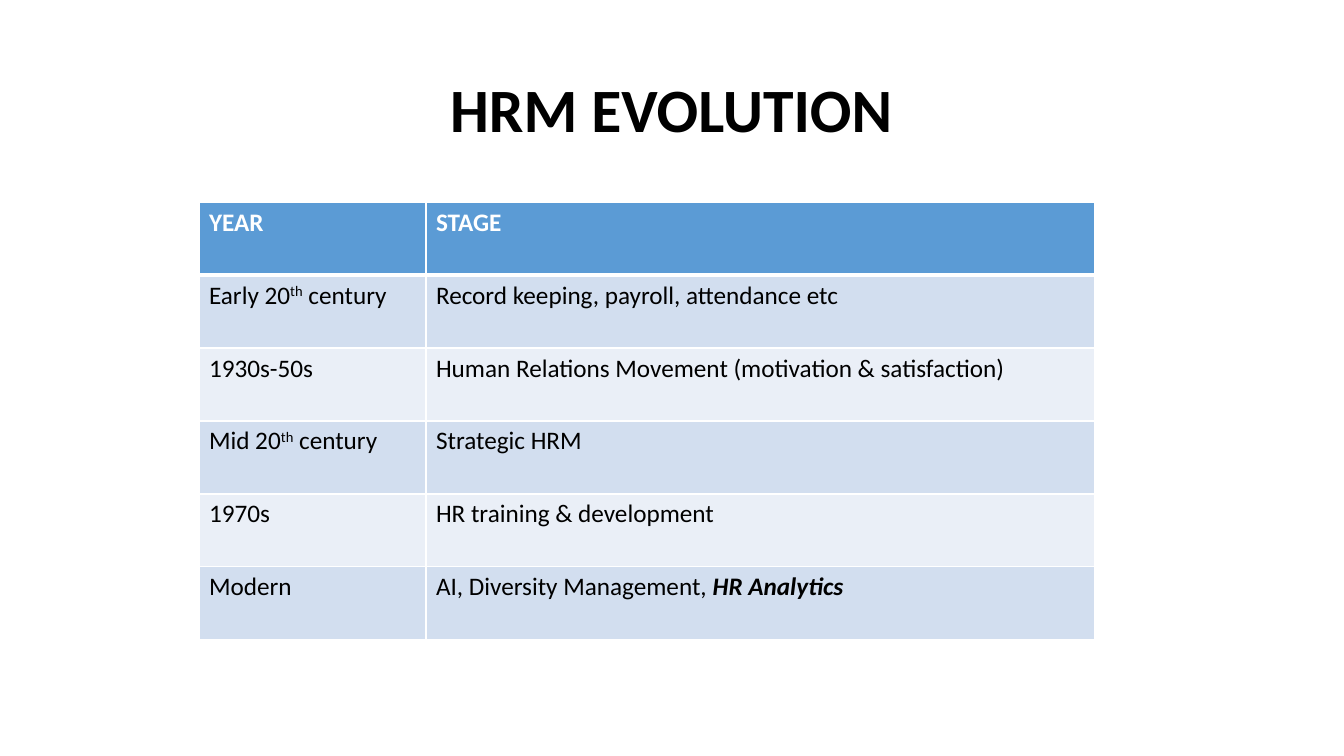
from dataclasses import dataclass

import lxml.etree
import pptx
import pptx.dml.color
import pptx.enum.text
import pptx.oxml.ns
import pptx.util

RGBColor = pptx.dml.color.RGBColor

EMU_PER_PX = 914400 / 100.8
FONT_NAME = "Calibri"
WHITE = RGBColor(0xFF, 0xFF, 0xFF)
BLACK = RGBColor(0x00, 0x00, 0x00)
HEADER_BLUE = RGBColor(0x5B, 0x9B, 0xD5)
BAND_FILLS = (RGBColor(0xEA, 0xEF, 0xF7), RGBColor(0xD2, 0xDE, 0xEF))

TABLE_LEFT, TABLE_TOP = 199, 202
COLUMN_WIDTHS = (227, 669)
ROW_HEIGHT = 73


@dataclass(frozen=True)
class TextRun:
    text: str
    bold: bool = False
    italic: bool = False
    superscript: bool = False


@dataclass(frozen=True)
class Stage:
    year: tuple[TextRun, ...]
    description: tuple[TextRun, ...]


def century(prefix: str) -> tuple[TextRun, ...]:
    """Name a part of the 20th century, with a raised ordinal."""
    return (TextRun(f"{prefix} 20"), TextRun("th", superscript=True), TextRun(" century"))


HEADER = Stage((TextRun("YEAR", bold=True),), (TextRun("STAGE", bold=True),))
STAGES = (
    Stage(century("Early"), (TextRun("Record keeping, payroll, attendance etc"),)),
    Stage(
        (TextRun("1930s-50s"),),
        (TextRun("Human Relations Movement (motivation & satisfaction)"),),
    ),
    Stage(century("Mid"), (TextRun("Strategic HRM"),)),
    Stage((TextRun("1970s"),), (TextRun("HR training & development"),)),
    Stage(
        (TextRun("Modern"),),
        (
            TextRun("AI, Diversity Management, "),
            TextRun("HR Analytics", bold=True, italic=True),
        ),
    ),
)


def px(length: int) -> pptx.util.Emu:
    return pptx.util.Emu(round(length * EMU_PER_PX))


def add_runs(paragraph, text_runs: tuple[TextRun, ...], size: int, color: RGBColor) -> None:
    for text_run in text_runs:
        run = paragraph.add_run()
        run.text = text_run.text
        run.font.name = FONT_NAME
        run.font.size = pptx.util.Pt(size)
        run.font.bold = text_run.bold
        run.font.italic = text_run.italic
        run.font.color.rgb = color
        if text_run.superscript:
            run._r.get_or_add_rPr().set("baseline", "30000")


def add_borders(cell, top: int, bottom: int) -> None:
    """Draw white cell borders; top and bottom are widths in points."""
    properties = cell._tc.get_or_add_tcPr()
    qn = pptx.oxml.ns.qn
    for side, width in (("L", 1), ("R", 1), ("T", top), ("B", bottom)):
        line = lxml.etree.SubElement(properties, qn(f"a:ln{side}"), w=str(pptx.util.Pt(width)))
        fill = lxml.etree.SubElement(line, qn("a:solidFill"))
        lxml.etree.SubElement(fill, qn("a:srgbClr"), val=str(WHITE))


def format_title(title) -> None:
    title.left, title.top = px(92), px(40)
    title.width, title.height = px(1159), px(146)
    frame = title.text_frame
    frame.word_wrap = True
    frame.auto_size = pptx.enum.text.MSO_AUTO_SIZE.NONE
    frame.vertical_anchor = pptx.enum.text.MSO_ANCHOR.MIDDLE
    paragraph = frame.paragraphs[0]
    paragraph.alignment = pptx.enum.text.PP_ALIGN.CENTER
    paragraph.line_spacing = 0.9
    add_runs(paragraph, (TextRun("HRM EVOLUTION", bold=True),), 44, BLACK)


def add_stage_table(slide) -> None:
    rows = (HEADER, *STAGES)
    table = slide.shapes.add_table(
        len(rows),
        len(COLUMN_WIDTHS),
        px(TABLE_LEFT),
        px(TABLE_TOP),
        px(sum(COLUMN_WIDTHS)),
        px(ROW_HEIGHT * len(rows)),
    ).table
    for column, width in zip(table.columns, COLUMN_WIDTHS):
        column.width = px(width)
    for row_index, stage in enumerate(rows):
        is_header = row_index == 0
        table.rows[row_index].height = px(ROW_HEIGHT)
        for column_index, text_runs in enumerate((stage.year, stage.description)):
            cell = table.cell(row_index, column_index)
            add_borders(cell, top=3 if row_index == 1 else 1, bottom=3 if is_header else 1)
            cell.fill.solid()
            cell.fill.fore_color.rgb = HEADER_BLUE if is_header else BAND_FILLS[row_index % 2]
            color = WHITE if is_header else BLACK
            add_runs(cell.text_frame.paragraphs[0], text_runs, 18, color)


def main() -> None:
    presentation = pptx.Presentation()
    presentation.slide_width, presentation.slide_height = px(1344), px(756)
    slide = presentation.slides.add_slide(presentation.slide_layouts.get_by_name("Title Only"))
    format_title(slide.shapes.title)
    add_stage_table(slide)
    presentation.save("out.pptx")


if __name__ == "__main__":
    main()
